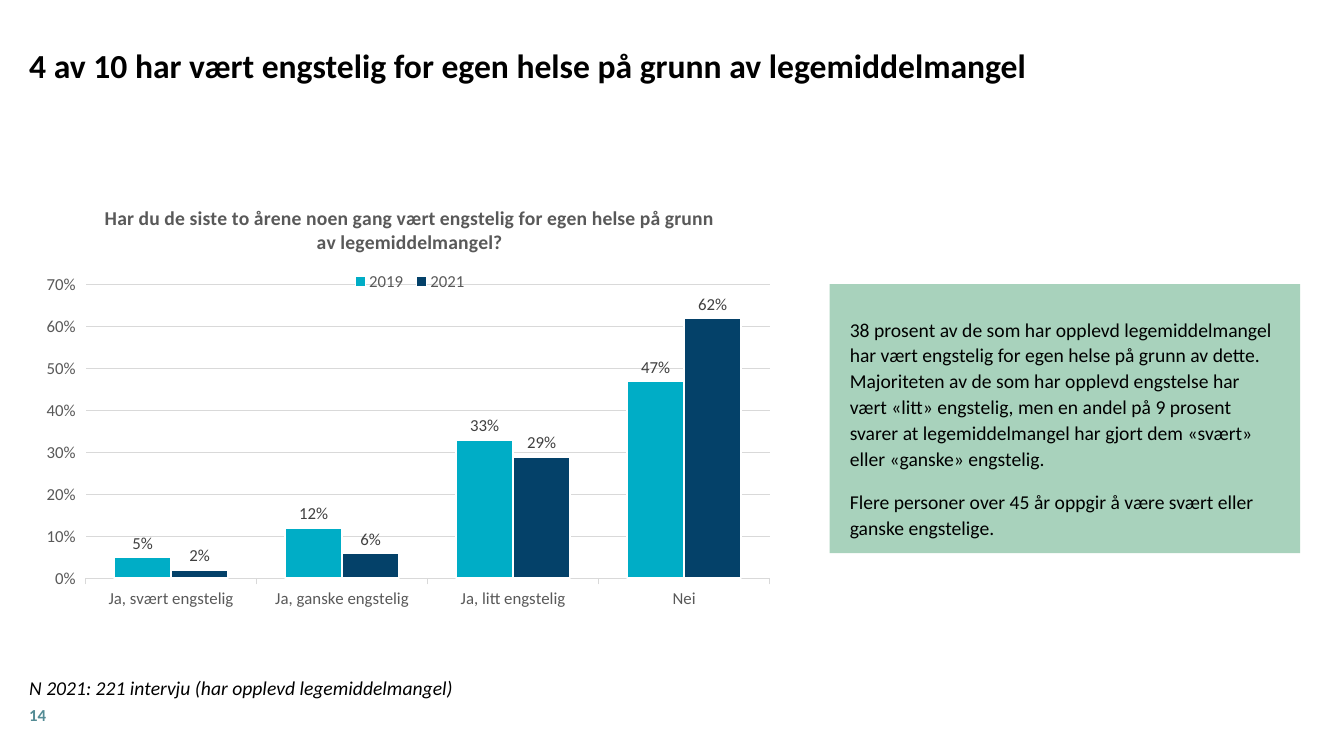
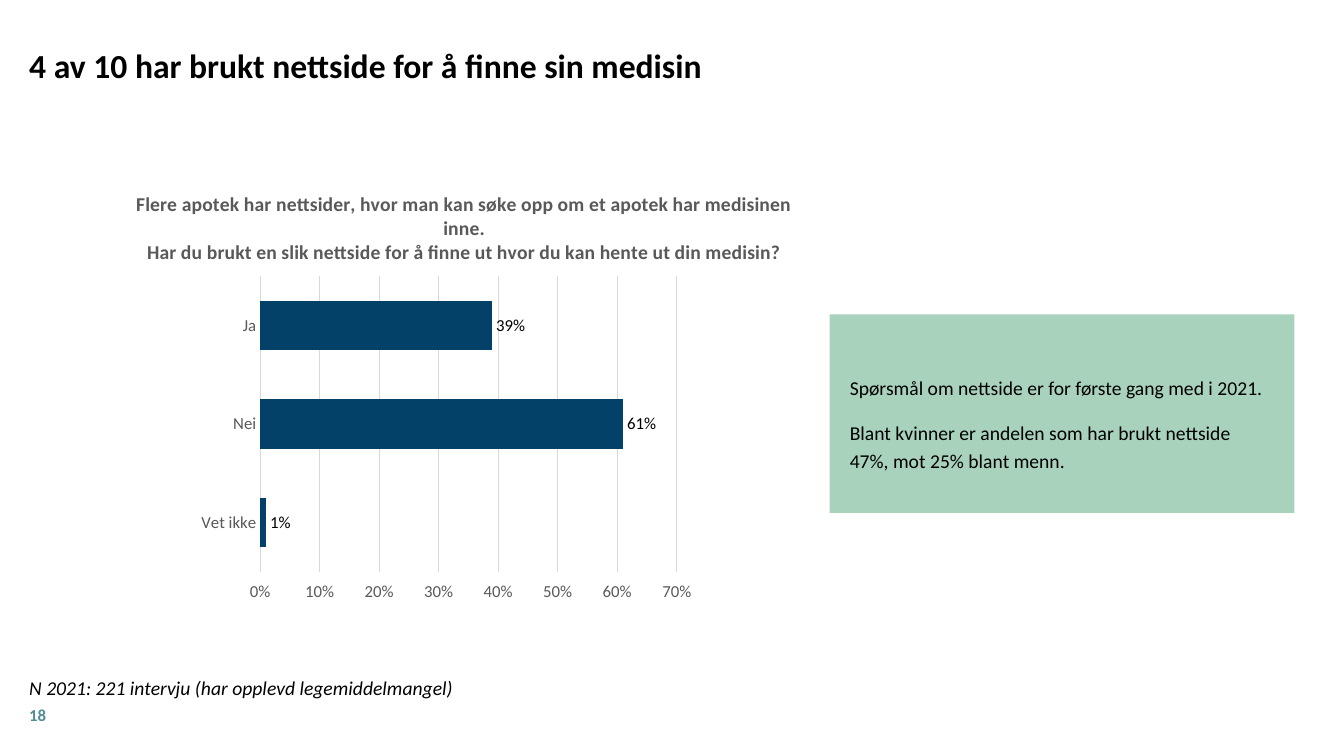
from dataclasses import dataclass, field
from typing import Any, Optional

import pptx
import pptx.chart.data
import pptx.dml.color
import pptx.enum.chart
import pptx.enum.shapes
import pptx.enum.text
import pptx.oxml
import pptx.oxml.ns
import pptx.util
from pptx.util import Pt

Color = pptx.dml.color.RGBColor
ChartType = pptx.enum.chart.XL_CHART_TYPE
TickMark = pptx.enum.chart.XL_TICK_MARK
Anchor = pptx.enum.text.MSO_ANCHOR


@dataclass(frozen=True)
class Theme:
    font: str = "Calibri"
    black: Color = Color(0, 0, 0)
    white: Color = Color(255, 255, 255)
    grey: Color = Color.from_string("595959")
    label_grey: Color = Color.from_string("404040")
    grid: Color = Color.from_string("D9D9D9")
    cyan: Color = Color.from_string("00ADC6")
    navy: Color = Color.from_string("044169")
    mint: Color = Color.from_string("A8D2BC")
    teal: Color = Color.from_string("548C95")
    title_size: float = 24
    body_size: float = 14
    small_size: float = 12


THEME = Theme()
MARGIN = 20.9
CONTENT_WIDTH = 919.4


@dataclass(frozen=True)
class Box:
    """A frame in points, or in fractions of a chart."""
    left: float
    top: float
    width: float
    height: float

    def points(self) -> list[pptx.util.Length]:
        return [Pt(value) for value in (self.left, self.top, self.width, self.height)]


@dataclass(frozen=True)
class Series:
    name: str
    values: list[float]
    color: Color


@dataclass(frozen=True)
class ChartSpec:
    kind: Any
    box: Box
    plot: Box
    title: str
    categories: list[str]
    series: list[Series]
    label_color: Color
    category_tick: Any
    bar_outline: bool = False
    legend: Optional[Box] = None


@dataclass(frozen=True)
class SlideSpec:
    number: str
    title: str
    note: str
    chart: ChartSpec
    callout_box: Box
    callout_spacing: float
    callout: list[str] = field(default_factory=list)


# Text

def style_font(font: Any, size: float, color: Color, bold: bool = False,
               italic: bool = False) -> None:
    font.name = THEME.font
    font.size = Pt(size)
    font.bold = bold
    font.italic = italic
    font.color.rgb = color


def write_text(shape: Any, text: str, size: float, color: Color, anchor: Any,
               spacing: float = 1.1, gap: float = 0, bold: bool = False,
               italic: bool = False,
               margins: tuple[float, float, float, float] = (0, 0, 0, 0)) -> None:
    frame = shape.text_frame
    frame.text = text
    frame.word_wrap = True
    frame.auto_size = pptx.enum.text.MSO_AUTO_SIZE.NONE
    frame.vertical_anchor = anchor
    (frame.margin_left, frame.margin_top,
     frame.margin_right, frame.margin_bottom) = [Pt(margin) for margin in margins]
    for index, paragraph in enumerate(frame.paragraphs):
        paragraph.alignment = pptx.enum.text.PP_ALIGN.LEFT
        paragraph.line_spacing = spacing
        paragraph.space_before = Pt(gap if index else 0)
        for run in paragraph.runs:
            style_font(run.font, size, color, bold, italic)


def place(shape: Any, box: Box) -> None:
    shape.left, shape.top, shape.width, shape.height = box.points()


# Charts

def layout_element(box: Box, inner: bool = False) -> Any:
    target = '<c:layoutTarget val="inner"/>' if inner else ""
    return pptx.oxml.parse_xml(
        f'<c:layout {pptx.oxml.ns.nsdecls("c")}><c:manualLayout>{target}'
        '<c:xMode val="edge"/><c:yMode val="edge"/>'
        f'<c:x val="{box.left}"/><c:y val="{box.top}"/>'
        f'<c:w val="{box.width}"/><c:h val="{box.height}"/>'
        '</c:manualLayout></c:layout>')


def set_layout(parent: Any, index: int, layout: Any) -> None:
    for existing in parent.findall(pptx.oxml.ns.qn("c:layout")):
        parent.remove(existing)
    parent.insert(index, layout)


def style_axes(chart: Any, category_tick: Any) -> None:
    category_axis, value_axis = chart.category_axis, chart.value_axis
    for axis in (category_axis, value_axis):
        style_font(axis.tick_labels.font, THEME.small_size, THEME.grey)
    category_axis.has_major_gridlines = False
    category_axis.major_tick_mark = category_tick
    category_axis.format.line.color.rgb = THEME.grid
    category_axis.format.line.width = Pt(0.75)
    value_axis.minimum_scale, value_axis.maximum_scale = 0, 0.7
    value_axis.major_unit = 0.1
    value_axis.format.line.fill.background()
    value_axis.major_gridlines.format.line.color.rgb = THEME.grid
    value_axis.major_gridlines.format.line.width = Pt(0.75)
    value_axis.tick_labels.number_format = "0%"
    value_axis.tick_labels.number_format_is_linked = False


def style_series(series: Any, spec: Series, chart_spec: ChartSpec) -> None:
    series.format.fill.solid()
    series.format.fill.fore_color.rgb = spec.color
    if chart_spec.bar_outline:
        series.format.line.color.rgb = THEME.white
        series.format.line.width = Pt(1.5)
    labels = series.data_labels
    labels.show_value = True
    labels.position = pptx.enum.chart.XL_LABEL_POSITION.OUTSIDE_END
    labels.number_format = "0%"
    labels.number_format_is_linked = False
    style_font(labels.font, THEME.small_size, chart_spec.label_color)


def add_legend(chart: Any, box: Box) -> None:
    chart.has_legend = True
    legend = chart.legend
    legend.position = pptx.enum.chart.XL_LEGEND_POSITION.TOP
    legend.include_in_layout = False
    style_font(legend.font, THEME.small_size, THEME.grey)
    element = chart.element.find(".//" + pptx.oxml.ns.qn("c:legend"))
    set_layout(element, 1, layout_element(box))


def add_bar_chart(slide: Any, spec: ChartSpec) -> None:
    data = pptx.chart.data.CategoryChartData(number_format="0%")
    data.categories = spec.categories
    for item in spec.series:
        data.add_series(item.name, item.values)
    chart = slide.shapes.add_chart(spec.kind, *spec.box.points(), data).chart
    style_font(chart.font, 10, THEME.black)

    chart.has_title = True
    chart.chart_title.include_in_layout = False
    chart.chart_title.text_frame.text = spec.title
    for paragraph in chart.chart_title.text_frame.paragraphs:
        for run in paragraph.runs:
            style_font(run.font, THEME.body_size, THEME.grey, bold=True)

    plot = chart.plots[0]
    plot.gap_width = 100
    plot.overlap = 0
    plot.vary_by_categories = False
    for series, item in zip(plot.series, spec.series):
        style_series(series, item, spec)
    style_axes(chart, spec.category_tick)
    plot_area = chart.element.find(".//" + pptx.oxml.ns.qn("c:plotArea"))
    set_layout(plot_area, 0, layout_element(spec.plot, inner=True))
    chart.has_legend = False
    if spec.legend:
        add_legend(chart, spec.legend)


# Slides

def add_callout(slide: Any, spec: SlideSpec) -> None:
    callout = slide.shapes.add_shape(
        pptx.enum.shapes.MSO_SHAPE.RECTANGLE, *spec.callout_box.points())
    callout.shadow.inherit = False
    callout.fill.solid()
    callout.fill.fore_color.rgb = THEME.mint
    callout.line.fill.background()
    write_text(callout, "\n".join(spec.callout), THEME.body_size, THEME.black,
               Anchor.MIDDLE, spec.callout_spacing, gap=12,
               margins=(14.4, 26.4, 14.4, 14.4))


def add_slide(presentation: Any, spec: SlideSpec) -> None:
    slide = presentation.slides.add_slide(presentation.slide_layouts[5])
    title = slide.shapes.title
    place(title, Box(MARGIN, 14.6, CONTENT_WIDTH, 61.2))
    write_text(title, spec.title, THEME.title_size, THEME.black, Anchor.MIDDLE, bold=True)

    add_bar_chart(slide, spec.chart)
    add_callout(slide, spec)

    # Sample note and page number
    note = slide.shapes.add_textbox(*Box(MARGIN, 476.6, CONTENT_WIDTH, 23).points())
    write_text(note, spec.note, THEME.body_size, THEME.black, Anchor.BOTTOM, italic=True)
    number = slide.shapes.add_textbox(*Box(MARGIN, 503.3, 18, 14.4).points())
    write_text(number, spec.number, THEME.small_size, THEME.teal, Anchor.MIDDLE,
               spacing=1, bold=True)


SAMPLE_NOTE = "N 2021: 221 intervju (har opplevd legemiddelmangel)"

SLIDES = [
    SlideSpec(
        "14", "4 av 10 har vært engstelig for egen helse på grunn av legemiddelmangel",
        SAMPLE_NOTE,
        ChartSpec(
            ChartType.COLUMN_CLUSTERED, Box(14.4, 132.5, 556.6, 336.2),
            Box(0.084, 0.211, 0.878, 0.624),
            "Har du de siste to årene noen gang vært engstelig for egen helse på grunn "
            "av legemiddelmangel?",
            ["Ja, svært engstelig", "Ja, ganske engstelig", "Ja, litt engstelig", "Nei"],
            [Series("2019", [0.05, 0.12, 0.33, 0.47], THEME.cyan),
             Series("2021", [0.02, 0.06, 0.29, 0.62], THEME.navy)],
            THEME.label_grey, TickMark.OUTSIDE, bar_outline=True,
            legend=Box(0.42, 0.18, 0.16, 0.05)),
        Box(592.6, 203, 336.2, 192.2), 1.1,
        ["38 prosent av de som har opplevd legemiddelmangel har vært engstelig for egen "
         "helse på grunn av dette. Majoriteten av de som har opplevd engstelse har vært "
         "«litt» engstelig, men en andel på 9 prosent svarer at legemiddelmangel har "
         "gjort dem «svært» eller «ganske» engstelig.",
         "Flere personer over 45 år oppgir å være svært eller ganske engstelige."]),
    SlideSpec(
        "18", "4 av 10 har brukt nettside for å finne sin medisin",
        SAMPLE_NOTE,
        ChartSpec(
            ChartType.BAR_CLUSTERED, Box(21.6, 123.1, 619.9, 340.6),
            Box(0.265, 0.218, 0.48, 0.62),
            "Flere apotek har nettsider, hvor man kan søke opp om et apotek har medisinen "
            "inne.\nHar du brukt en slik nettside for å finne ut hvor du kan hente ut din "
            "medisin?",
            ["Vet ikke", "Nei", "Ja"],
            [Series("Series 1", [0.01, 0.61, 0.39], THEME.navy)],
            THEME.black, TickMark.NONE),
        Box(592.6, 224.6, 331.9, 141.8), 1.2,
        ["Spørsmål om nettside er for første gang med i 2021.",
         "Blant kvinner er andelen som har brukt nettside 47%, mot 25% blant menn."]),
]


def main() -> None:
    presentation = pptx.Presentation()
    presentation.slide_width, presentation.slide_height = Pt(960), Pt(540)
    for spec in SLIDES:
        add_slide(presentation, spec)
    presentation.save("out.pptx")


if __name__ == "__main__":
    main()
